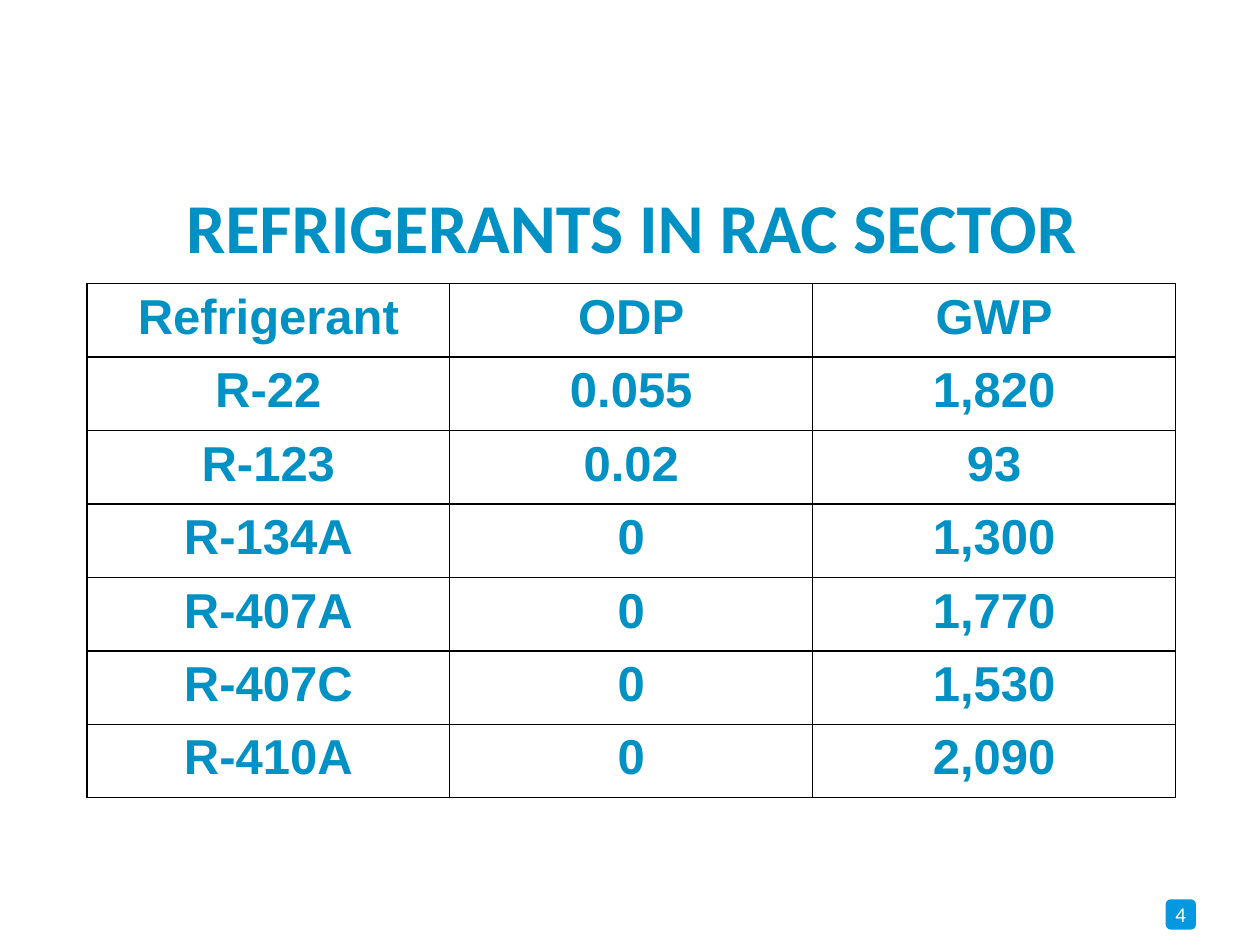
from dataclasses import dataclass

from lxml import etree
from pptx import Presentation
from pptx.dml.color import RGBColor
from pptx.enum import shapes, text
from pptx.oxml import ns
from pptx.util import Cm, Pt


@dataclass(frozen=True)
class Theme:
    """Colours, fonts and sizes of the deck."""
    ink: str = "0091C4"
    badge: str = "0698DF"
    paper: str = "FFFFFF"
    rule: str = "000000"
    heading_font: str = "Calibri"
    table_font: str = "Arial"
    title_size: int = 40
    table_size: int = 28
    number_size: int = 12
    rule_width: int = 1


THEME = Theme()
REFRIGERANTS = [
    ("Refrigerant", "ODP", "GWP"),
    ("R-22", "0.055", "1,820"),
    ("R-123", "0.02", "93"),
    ("R-134A", "0", "1,300"),
    ("R-407A", "0", "1,770"),
    ("R-407C", "0", "1,530"),
    ("R-410A", "0", "2,090"),
]


def paint(fill, colour):
    """Fill with one solid colour."""
    fill.solid()
    fill.fore_color.rgb = RGBColor.from_string(colour)


def write(frame, words, font, size, colour, bold=False):
    """Write one centred run into a text frame."""
    para = frame.paragraphs[0]
    para.alignment = text.PP_ALIGN.CENTER
    span = para.add_run()
    span.text = words
    span.font.name = font
    span.font.size = Pt(size)
    span.font.bold = bold
    span.font.color.rgb = RGBColor.from_string(colour)
    return para


def rule_cell(cell):
    """Draw a thin line on all four sides of a cell."""
    properties = cell._tc.get_or_add_tcPr()
    for side in ("lnL", "lnR", "lnT", "lnB"):
        line = etree.SubElement(properties, ns.qn(f"a:{side}"), w=str(Pt(THEME.rule_width)))
        solid = etree.SubElement(line, ns.qn("a:solidFill"))
        etree.SubElement(solid, ns.qn("a:srgbClr"), val=THEME.rule)


def add_title(page, words, left, top, width, height):
    """Place the title placeholder and its heading."""
    box = page.shapes.title
    box.left, box.top, box.width, box.height = left, top, width, height
    frame = box.text_frame
    frame.word_wrap = True
    frame.vertical_anchor = text.MSO_ANCHOR.MIDDLE
    para = write(frame, words, THEME.heading_font, THEME.title_size, THEME.ink, bold=True)
    para.line_spacing = 0.9


def add_refrigerant_table(page, rows, left, top, width, height):
    """Place the ruled table with equal rows and columns."""
    table = page.shapes.add_table(len(rows), len(rows[0]), left, top, width, height).table
    for row, values in enumerate(rows):
        for column, value in enumerate(values):
            cell = table.cell(row, column)
            rule_cell(cell)
            paint(cell.fill, THEME.paper)
            write(cell.text_frame, value, THEME.table_font, THEME.table_size, THEME.ink, bold=True)


def add_page_number(page, number, left, top, side):
    """Place the rounded page number badge."""
    box = page.shapes.add_shape(shapes.MSO_SHAPE.ROUNDED_RECTANGLE, left, top, side, side)
    box.shadow.inherit = False
    paint(box.fill, THEME.badge)
    box.line.fill.background()
    frame = box.text_frame
    frame.margin_left = frame.margin_right = frame.margin_top = frame.margin_bottom = 0
    frame.vertical_anchor = text.MSO_ANCHOR.MIDDLE
    write(frame, number, THEME.heading_font, THEME.number_size, THEME.paper)


def main():
    """Build and save the deck."""
    deck = Presentation()
    deck.slide_width, deck.slide_height = Cm(25.4), Cm(19.05)
    page = deck.slides.add_slide(deck.slide_layouts[5])
    paint(page.background.fill, THEME.paper)
    left, width = Cm(1.75), Cm(21.95)
    add_page_number(page, "4", Cm(23.5), Cm(18.13), Cm(0.61))
    add_title(page, "REFRIGERANTS IN RAC SECTOR", left, Cm(3.12), width, Cm(3.05))
    add_refrigerant_table(page, REFRIGERANTS, left, Cm(5.72), width, Cm(10.36))
    deck.save("out.pptx")


if __name__ == "__main__":
    main()
